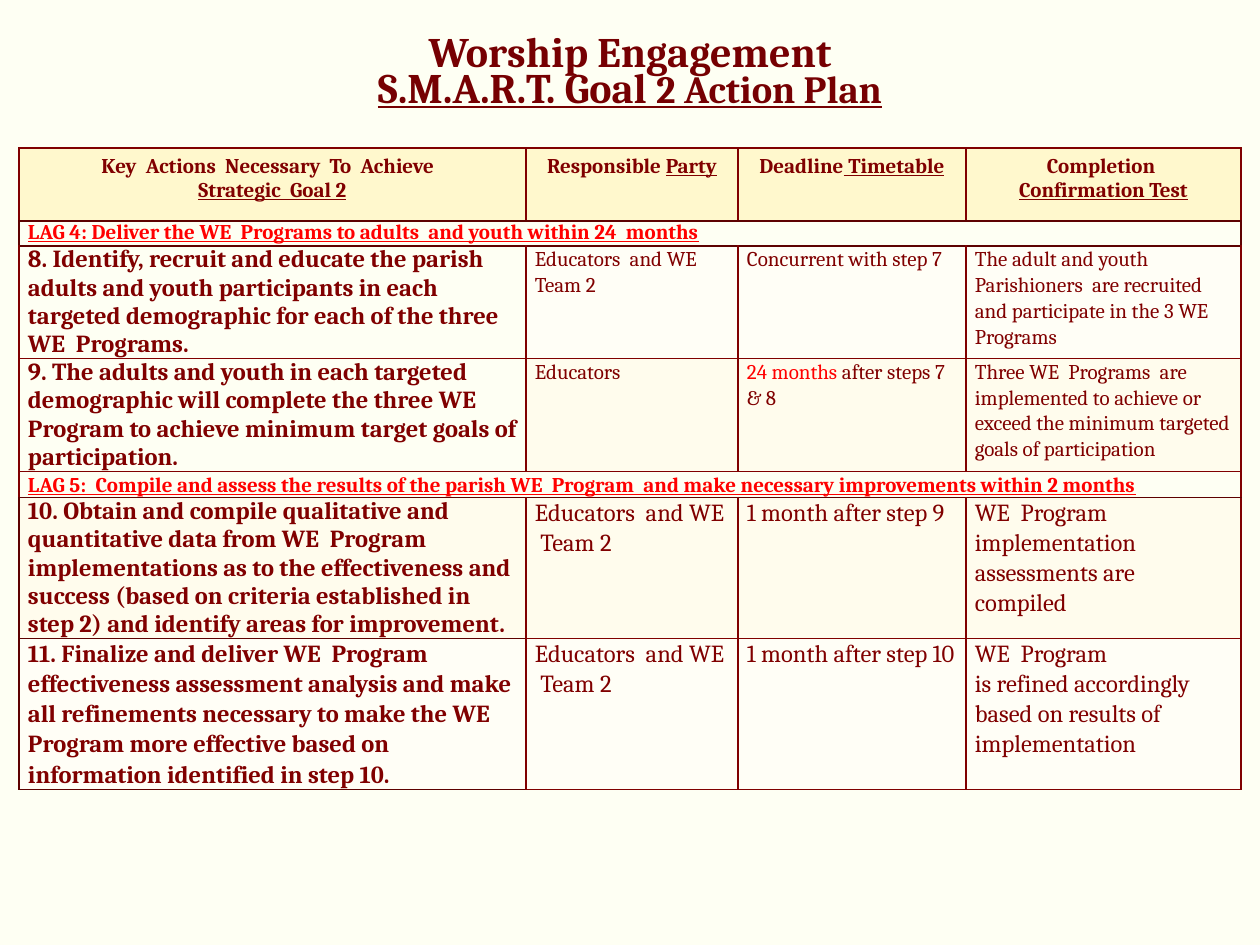
from lxml.etree import SubElement
from pptx import Presentation
from pptx.dml.color import RGBColor
from pptx.enum.text import MSO_ANCHOR, PP_ALIGN
from pptx.oxml.ns import qn
from pptx.util import Pt

PX = 7257
FONT = "Cambria"
CREAM = RGBColor(0xFE, 0xFF, 0xF3)
GOLD = RGBColor(0xFF, 0xF8, 0xCD)
PALE = RGBColor(0xFF, 0xFE, 0xF6)
WARM = RGBColor(0xFF, 0xFC, 0xED)
MAROON = RGBColor(0x80, 0x00, 0x00)
DARK = RGBColor(0x5D, 0x01, 0x00)
WINE = RGBColor(0x76, 0x00, 0x02)
RED = RGBColor(0xFF, 0x00, 0x00)

COLS = [507, 212, 228, 275]
ROWS = [73, 25, 112, 113, 26, 141, 151]

HEADS = [
    [[("Key  Actions  Necessary  To  Achieve  ", False)], [("Strategic  Goal 2", True)]],
    [[("Responsible ", False), ("Party", True)]],
    [[("Deadline", False), (" Timetable", True)]],
    [[("Completion ", False)], [("Confirmation Test", True)]],
]
LAGS = {
    1: ("LAG 4: Deliver the WE  Programs to adults  and youth within 24  months", 1),
    4: ("LAG 5:  Compile and assess the results of the parish WE  Program  and make "
        "necessary improvements within 2 months", 1.07),
}
STEPS = [
    (2, 12, 1, None, PALE, [
        "8. Identify, recruit and educate the parish adults and youth participants in each "
        "targeted demographic for each of the three WE  Programs.",
        "Educators  and WE  Team 2",
        "Concurrent with step 7",
        "The adult and youth Parishioners  are recruited and participate in the 3 WE  Programs"]),
    (3, 12, 1, None, WARM, [
        "9. The adults and youth in each targeted demographic will complete the three WE  "
        "Program to achieve minimum target goals of participation.",
        "Educators",
        "24 months |after steps 7 & 8",
        "Three WE  Programs  are implemented to achieve or exceed the minimum targeted "
        "goals of participation"]),
    (5, 14, 1, WARM, WARM, [
        "10. Obtain and compile qualitative and quantitative data from WE  Program "
        "implementations as to the effectiveness and success (based on criteria established "
        "in step 2) and identify areas for improvement.",
        "Educators  and WE  Team 2",
        "1 month after step 9",
        "WE  Program\nimplementation  assessments are compiled"]),
    (6, 14, 1.07, PALE, PALE, [
        "11. Finalize and deliver WE  Program effectiveness assessment analysis and make all "
        "refinements necessary to make the WE  Program more effective based on information "
        "identified in step 10.",
        "Educators  and WE  Team 2",
        "1 month after step 10",
        "WE  Program\nis refined accordingly based on results of implementation"]),
]


def add_text(para, text, size, color=MAROON, bold=False, under=False):
    run = para.add_run()
    run.text = text
    font = run.font
    font.name, font.size, font.bold, font.underline = FONT, Pt(size), bold, under
    font.color.rgb = color


def get_para(frame, index):
    return frame.add_paragraph() if index else frame.paragraphs[0]


def set_edge(cell, side, color):
    props = cell._tc.get_or_add_tcPr()
    line = SubElement(props, qn("a:ln" + side), w=str(Pt(1)))
    fill = SubElement(line, qn("a:solidFill"))
    SubElement(fill, qn("a:srgbClr"), val=str(color))


def edge_color(row, col, side):
    dark = (row == 1 or (row >= 5 and col == 0)
            or (row, side) in [(0, "B"), (2, "T"), (4, "B"), (5, "T")])
    return DARK if dark else MAROON


def set_fill(cell, color):
    if color is None:
        cell.fill.background()
    else:
        cell.fill.solid()
        cell.fill.fore_color.rgb = color


def set_inset(cell):
    cell.margin_left = cell.margin_right = 9 * PX
    cell.margin_top = cell.margin_bottom = 0


def add_title(slide):
    frame = slide.shapes.add_textbox(137 * PX, 0, 986 * PX, 150 * PX).text_frame
    frame.word_wrap = True
    frame.vertical_anchor = MSO_ANCHOR.MIDDLE
    para = frame.paragraphs[0]
    para.alignment = PP_ALIGN.CENTER
    para.line_spacing = 0.7
    add_text(para, "Worship Engagement", 24, WINE, True)
    para.add_line_break()
    add_text(para, "S.M.A.R.T. Goal ", 24, WINE, True, True)
    add_text(para, "2 Action Plan", 22, WINE, True, True)


def add_grid(slide):
    table = slide.shapes.add_table(
        len(ROWS), len(COLS), 19 * PX, 148 * PX, sum(COLS) * PX, sum(ROWS) * PX).table
    table.first_row = table.horz_banding = False
    for col, width in zip(table.columns, COLS):
        col.width = width * PX
    for row, height in zip(table.rows, ROWS):
        row.height = height * PX
    for row in range(len(ROWS)):
        for col in range(len(COLS)):
            cell = table.cell(row, col)
            for side in "LRTB":
                set_edge(cell, side, edge_color(row, col, side))
            set_fill(cell, None)
    return table


def fill_heads(table):
    for col, lines in enumerate(HEADS):
        cell = table.cell(0, col)
        set_fill(cell, GOLD)
        for index, parts in enumerate(lines):
            para = get_para(cell.text_frame, index)
            para.alignment = PP_ALIGN.CENTER
            for text, under in parts:
                add_text(para, text, 12, bold=True, under=under)


def fill_lags(table):
    for row, (text, space) in LAGS.items():
        cell = table.cell(row, 0)
        cell.merge(table.cell(row, len(COLS) - 1))
        set_inset(cell)
        para = cell.text_frame.paragraphs[0]
        para.line_spacing = space
        add_text(para, text, 12, RED, True, True)


def fill_steps(table):
    for row, size, space, first, rest, texts in STEPS:
        for col, text in enumerate(texts):
            cell = table.cell(row, col)
            set_inset(cell)
            set_fill(cell, rest if col else first)
            for index, line in enumerate(text.split("\n")):
                para = get_para(cell.text_frame, index)
                para.line_spacing = 1.07 if col else space
                alert, mark, plain = line.rpartition("|")
                if mark:
                    add_text(para, alert, size, RED)
                add_text(para, plain, size if col else 14, bold=col == 0)


def main():
    deck = Presentation()
    deck.slide_width, deck.slide_height = 1260 * PX, 945 * PX
    slide = deck.slides.add_slide(deck.slide_layouts[6])
    slide.background.fill.solid()
    slide.background.fill.fore_color.rgb = CREAM
    table = add_grid(slide)
    fill_heads(table)
    fill_lags(table)
    fill_steps(table)
    add_title(slide)
    deck.save("out.pptx")


if __name__ == "__main__":
    main()
